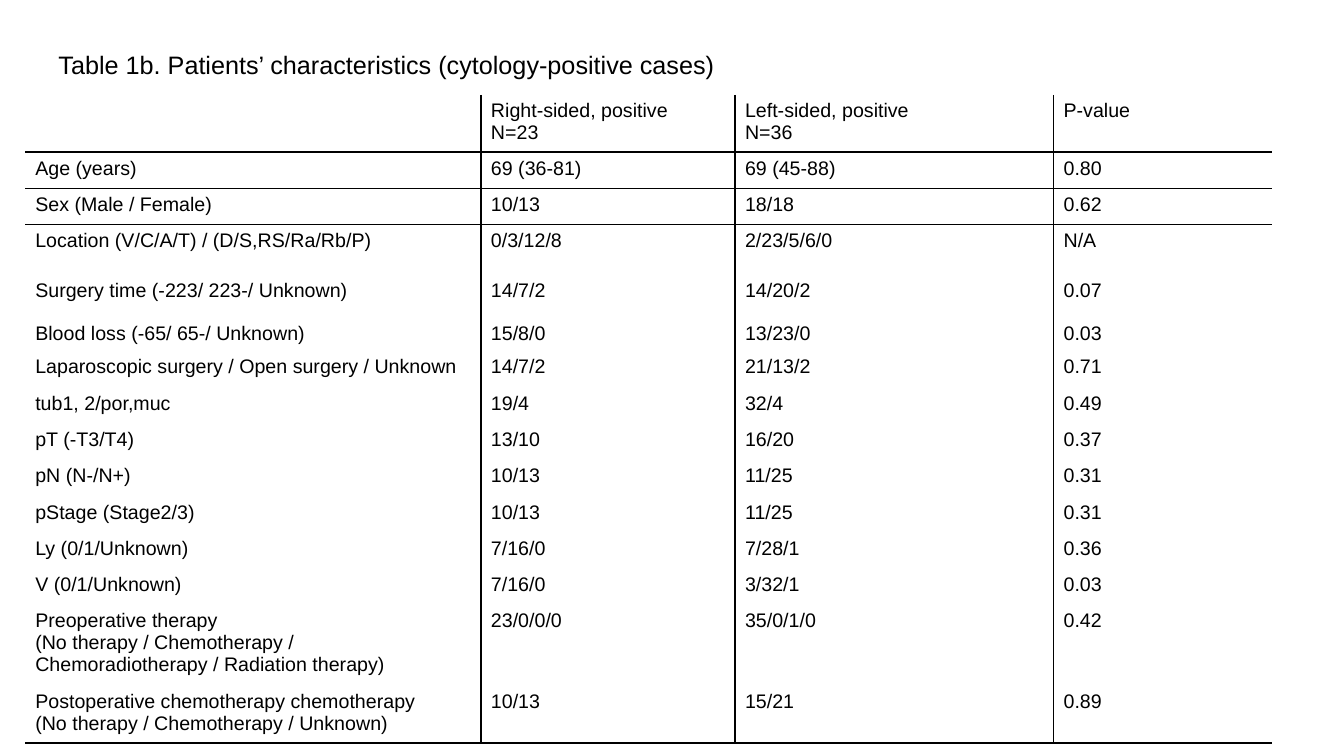
from pptx import Presentation
from pptx.dml.color import RGBColor
from pptx.enum.text import MSO_ANCHOR, MSO_AUTO_SIZE, PP_ALIGN
from pptx.oxml import parse_xml
from pptx.oxml.ns import nsdecls
from pptx.util import Inches, Pt

BLACK = RGBColor(0x00, 0x00, 0x00)
NO_STYLE_NO_GRID = "{2D5ABB26-0587-4C30-8999-92F81FD0307C}"


def write(frame, text, size=14, font="Arial", color=BLACK, align=PP_ALIGN.LEFT):
    """Fill a text frame, one paragraph per line of text."""
    frame.text = text
    for paragraph in frame.paragraphs:
        paragraph.alignment = align
        for run in paragraph.runs:
            run.font.size = Pt(size)
            run.font.name = font
            run.font.color.rgb = color


def add_border(cell, side, width=1):
    """Append a border; sides must come in the order L, R, T, B."""
    cell._tc.get_or_add_tcPr().append(parse_xml(
        f'<a:ln{side} {nsdecls("a")} w="{Pt(width)}"><a:solidFill>'
        f'<a:srgbClr val="{BLACK}"/></a:solidFill></a:ln{side}>'))


prs = Presentation()
prs.slide_width, prs.slide_height = Inches(13.33), Inches(7.5)
slide = prs.slides.add_slide(prs.slide_layouts[5])

# Title
title = slide.shapes.title
title.left, title.top = Inches(0.48), Inches(0.44)
title.width, title.height = Inches(6.91), Inches(0.4)
write(title.text_frame, "Table 1b. Patients’ characteristics (cytology-positive cases)", size=18)
title.text_frame.word_wrap = False
title.text_frame.auto_size = MSO_AUTO_SIZE.SHAPE_TO_FIT_TEXT
title.text_frame.vertical_anchor = MSO_ANCHOR.TOP

# Row height and cell texts
characteristics = [
    (0.57, "", "Right-sided, positive\nN=23", "Left-sided, positive\nN=36", "P-value"),
    (0.36, "Age (years)", "69 (36-81)", "69 (45-88)", "0.80"),
    (0.36, "Sex (Male / Female)", "10/13", "18/18", "0.62"),
    (0.5, "Location (V/C/A/T) / (D/S,RS/Ra/Rb/P)", "0/3/12/8", "2/23/5/6/0", "N/A"),
    (0.42, "Surgery time (-223/ 223-/ Unknown)", "14/7/2", "14/20/2", "0.07"),
    (0.33, "Blood loss (-65/ 65-/ Unknown)", "15/8/0", "13/23/0", "0.03"),
    (0.36, "Laparoscopic surgery / Open surgery / Unknown", "14/7/2", "21/13/2", "0.71"),
    (0.36, "tub1, 2/por,muc", "19/4", "32/4", "0.49"),
    (0.36, "pT (-T3/T4)", "13/10", "16/20", "0.37"),
    (0.36, "pN (N-/N+)", "10/13", "11/25", "0.31"),
    (0.36, "pStage (Stage2/3)", "10/13", "11/25", "0.31"),
    (0.36, "Ly (0/1/Unknown)", "7/16/0", "7/28/1", "0.36"),
    (0.36, "V (0/1/Unknown)", "7/16/0", "3/32/1", "0.03"),
    (0.8, "Preoperative therapy\n(No therapy / Chemotherapy /\n"
          "Chemoradiotherapy / Radiation therapy)", "23/0/0/0", "35/0/1/0", "0.42"),
    (0.57, "Postoperative chemotherapy chemotherapy\n(No therapy / Chemotherapy / Unknown)",
     "10/13", "15/21", "0.89"),
]
column_widths = [4.52, 2.52, 3.16, 2.17]
last_row = len(characteristics) - 1
line_below = {0: 1.5, 1: 0.75, last_row: 1.5}

# Table of patients' characteristics
table = slide.shapes.add_table(
    len(characteristics), len(column_widths), Inches(0.25), Inches(0.94),
    Inches(sum(column_widths)), Inches(sum(row[0] for row in characteristics))).table
table._tbl.tblPr.find("{*}tableStyleId").text = NO_STYLE_NO_GRID
table.first_row = table.horz_banding = False
for column, width in zip(table.columns, column_widths):
    column.width = Inches(width)

for r, (height, *texts) in enumerate(characteristics):
    table.rows[r].height = Inches(height)
    for c, text in enumerate(texts):
        cell = table.cell(r, c)
        write(cell.text_frame, text)
        if c in (1, 2):
            add_border(cell, "L")
        if c in (0, 1):
            add_border(cell, "R")
        if r - 1 in line_below:
            add_border(cell, "T", line_below[r - 1])
        if r in line_below:
            add_border(cell, "B", line_below[r])
        cell.fill.background()

# An empty corner cell still needs a text size that fits its row
table.cell(0, 0).text_frame.paragraphs[0].font.size = Pt(14)

prs.save("out.pptx")
